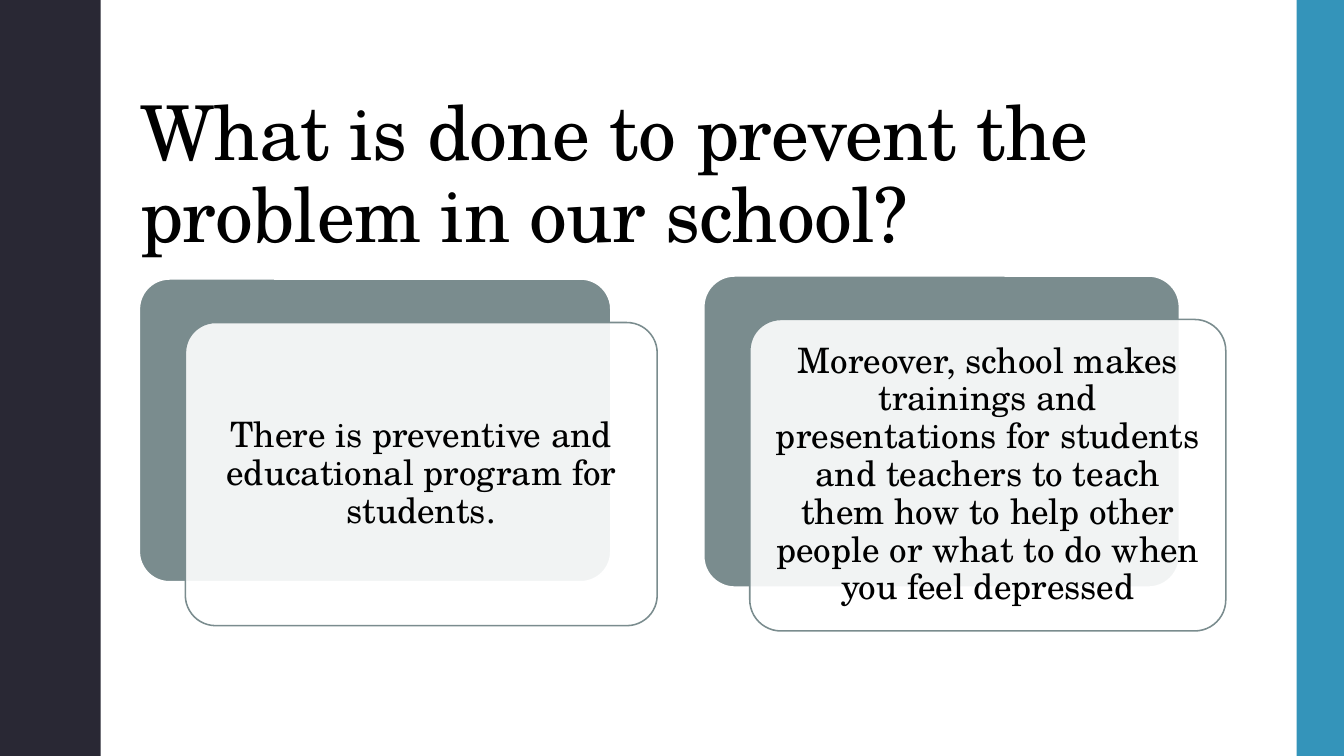
from lxml.etree import SubElement
from pptx import Presentation
from pptx.dml.color import RGBColor
from pptx.enum.shapes import MSO_SHAPE as Preset
from pptx.enum.text import MSO_ANCHOR as Anchor, PP_ALIGN as Align
from pptx.oxml.ns import qn
from pptx.util import Pt

WIDTH, HEIGHT = 960, 540
FONT = "TeX Gyre Schola"
BLACK, WHITE, SLATE = "000000", "FFFFFF", "7A8C8E"

TITLE = "What is done to prevent the problem in our school?"
BANDS = [(0, 962, WHITE), (0, 72, "292834"), (926.2, 36, "3494BA")]
MEASURES = [
    ("There is preventive and educational program for students.",
     (99.4, 199.2, 337, 216.5)),
    ("Moreover, school makes trainings and presentations for students and "
     "teachers to teach them how to help other people or what to do when "
     "you feel depressed",
     (502.6, 197, 340, 222.5)),
]
FRONT_SHIFT_X, FRONT_SHIFT_Y = 33, 31.2


def paint(color_format, color):
    color_format.rgb = RGBColor.from_string(color)


def write(frame, text, size, align=Align.LEFT, anchor=Anchor.MIDDLE,
          margins=(8, 7.2), spacing=None):
    frame.word_wrap = True
    frame.vertical_anchor = anchor
    frame.margin_left = frame.margin_right = Pt(margins[0])
    frame.margin_top = frame.margin_bottom = Pt(margins[1])
    paragraph = frame.paragraphs[0]
    paragraph.alignment = align
    paragraph.line_spacing = 0.9
    run = paragraph.add_run()
    run.text = text
    run.font.name = FONT
    run.font.size = Pt(size)
    paint(run.font.color, BLACK)
    if spacing is not None:
        run.font._element.set("spc", str(int(spacing * 100)))


def add_block(slide, preset, box, color, line=None, opacity=None):
    block = slide.shapes.add_shape(preset, *map(Pt, box))
    block.shadow.inherit = False
    block.fill.solid()
    paint(block.fill.fore_color, color)
    if opacity is not None:
        tint = block.fill._xPr.find(".//" + qn("a:srgbClr"))
        SubElement(tint, qn("a:alpha")).set("val", str(opacity * 1000))
    if line:
        line_color, line_width = line
        paint(block.line.color, line_color)
        block.line.width = Pt(line_width)
    else:
        block.line.fill.background()
    if preset == Preset.ROUNDED_RECTANGLE:
        block.adjustments[0] = 0.1
    return block


def add_measure(slide, text, back_box):
    left, top, width, height = back_box
    front_box = (left + FRONT_SHIFT_X, top + FRONT_SHIFT_Y, width, height)
    add_block(slide, Preset.ROUNDED_RECTANGLE, back_box, SLATE,
              line=(WHITE, 1.35))
    front = add_block(slide, Preset.ROUNDED_RECTANGLE, front_box, WHITE,
                      line=(SLATE, 1.1), opacity=90)
    write(front.text_frame, text, 25, align=Align.CENTER)


def main():
    deck = Presentation()
    deck.slide_width, deck.slide_height = Pt(WIDTH), Pt(HEIGHT)
    slide = deck.slides.add_slide(deck.slide_layouts[6])
    slide.background.fill.solid()
    paint(slide.background.fill.fore_color, WHITE)

    for left, width, color in BANDS:
        add_block(slide, Preset.RECTANGLE, (left, 0, width, HEIGHT), color)
    title = slide.shapes.add_textbox(Pt(93), Pt(55.8), Pt(817), Pt(132.5))
    write(title.text_frame, TITLE, 54, anchor=Anchor.BOTTOM,
          margins=(7.2, 3.6), spacing=-0.5)
    for text, back_box in MEASURES:
        add_measure(slide, text, back_box)
    deck.save("out.pptx")


if __name__ == "__main__":
    main()
